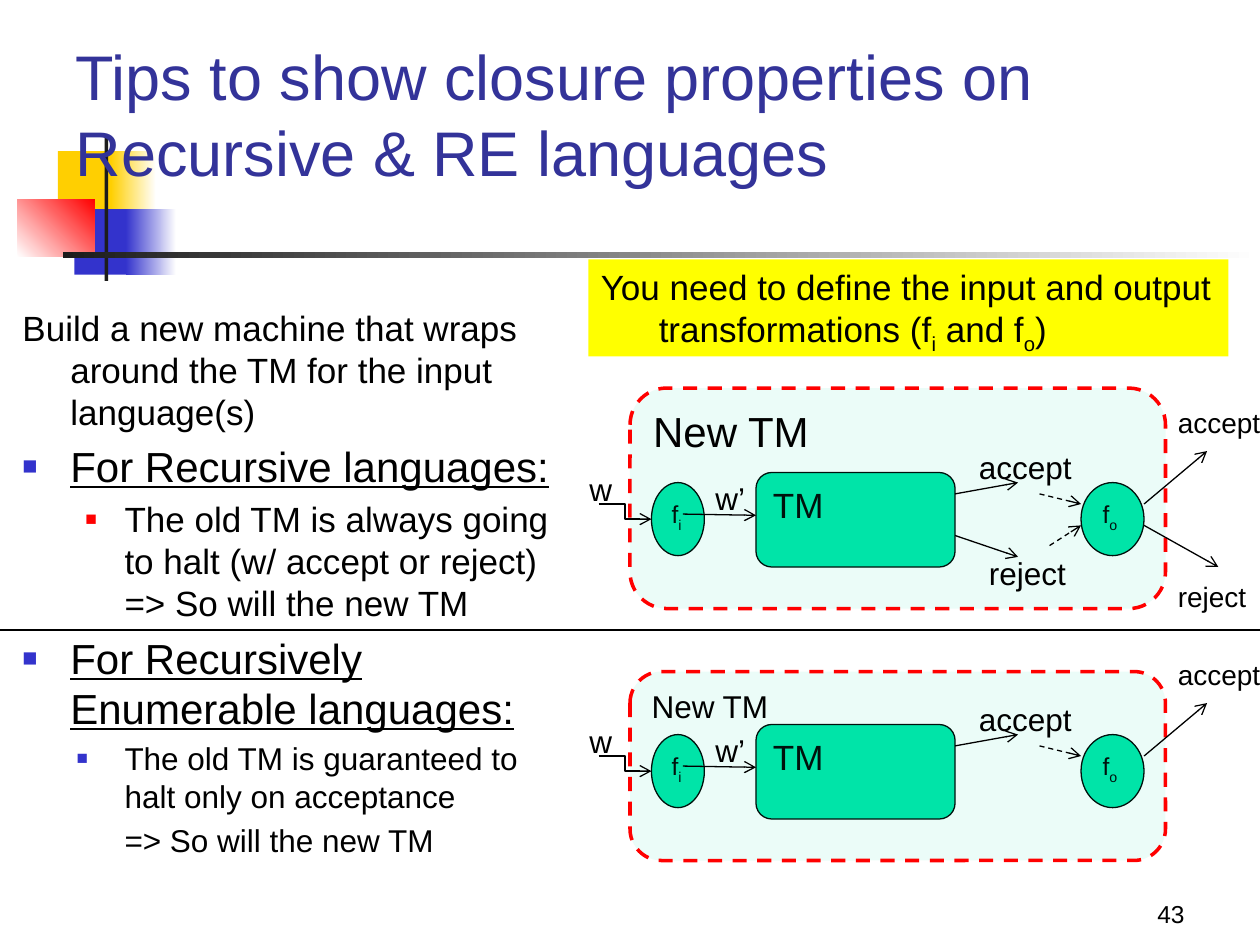
import lxml.etree
import pptx
import pptx.dml.color
import pptx.enum.dml
import pptx.enum.shapes
import pptx.enum.text
import pptx.oxml.ns
import pptx.util

Inches = pptx.util.Inches
Pt = pptx.util.Pt
RGBColor = pptx.dml.color.RGBColor
SHAPE = pptx.enum.shapes.MSO_SHAPE
CONNECTOR = pptx.enum.shapes.MSO_CONNECTOR
ANCHOR = pptx.enum.text.MSO_ANCHOR
ALIGN = pptx.enum.text.PP_ALIGN
FIT = pptx.enum.text.MSO_AUTO_SIZE
DASH = pptx.enum.dml.MSO_LINE.DASH
qn = pptx.oxml.ns.qn

BLACK = RGBColor(0x00, 0x00, 0x00)
WHITE = RGBColor(0xFF, 0xFF, 0xFF)
CHARCOAL = RGBColor(0x1C, 0x1C, 0x1C)
GOLD = RGBColor(0xFF, 0xCF, 0x01)
BLUE = RGBColor(0x33, 0x33, 0xCC)
NAVY = RGBColor(0x33, 0x33, 0x99)
RED = RGBColor(0xFF, 0x00, 0x00)
GREEN = RGBColor(0x00, 0xE4, 0xA8)
YELLOW = RGBColor(0xFF, 0xFF, 0x00)


def add_runs(paragraph, text, size, color=BLACK, underline=False):
    """Add text in Arial; every second piece between underscores is a subscript."""
    paragraph.alignment = ALIGN.LEFT
    for index, piece in enumerate(text.split("_")):
        run = paragraph.add_run()
        run.text = piece
        run.font.name = "Arial"
        run.font.size = Pt(size)
        run.font.color.rgb = color
        if underline:
            run.font.underline = True
        if index % 2:
            run.font._element.set("baseline", "-25000")


def add_line(start, end, kind=CONNECTOR.STRAIGHT, dashed=False, arrow=True):
    line = slide.shapes.add_connector(kind, *map(Inches, start + end))
    line.line.color.rgb = BLACK
    line.line.width = Pt(0.75)
    if dashed:
        line.line.dash_style = DASH
    if arrow:
        outline = line.line._get_or_add_ln()
        lxml.etree.SubElement(outline, qn("a:tailEnd"), type="arrow")
    lxml.etree.SubElement(line.element.spPr, qn("a:effectLst"))


presentation = pptx.Presentation()
presentation.slide_width = Inches(10)
presentation.slide_height = Inches(7.5)
slide = presentation.slides.add_slide(presentation.slide_layouts[5])

# Decoration: coloured squares, upright bar and rule
decorations = [
    ((0.46, 1.2, 0.48, 0.52), GOLD, None, 0),
    ((0.88, 1.2, 0.36, 0.52), GOLD, WHITE, 0),
    ((0.59, 1.66, 0.46, 0.52), BLUE, None, 0),
    ((1, 1.66, 0.4, 0.52), BLUE, WHITE, 0),
    ((0.14, 1.58, 0.61, 0.46), WHITE, RED, 45),
    ((0.83, 1.08, 0.03, 1.15), CHARCOAL, None, 0),
    ((0.5, 2, 9.5, 0.05), CHARCOAL, WHITE, 0),
]
for bounds, color, end_color, angle in decorations:
    shape = slide.shapes.add_shape(SHAPE.RECTANGLE, *map(Inches, bounds))
    shape.shadow.inherit = False
    shape.line.fill.background()
    if end_color is None:
        shape.fill.solid()
        shape.fill.fore_color.rgb = color
    else:
        shape.fill.gradient()
        shape.fill.gradient_angle = angle
        for stop, stop_color in zip(shape.fill.gradient_stops, (color, end_color)):
            stop.color.rgb = stop_color

# Title, in front of the decoration
title = slide.shapes.title
title.element.getparent().append(title.element)
title.left, title.top, title.width, title.height = map(Inches, (0.5, 0.3, 9, 1.25))
title.text_frame.vertical_anchor = ANCHOR.BOTTOM
title.text_frame.auto_size = FIT.NONE
add_runs(title.text_frame.paragraphs[0],
         "Tips to show closure properties on Recursive & RE languages", 36, NAVY)

# Body: text, size, underline, left margin, first-line indent, bullet colour, bullet size
body_lines = [
    ("Build a new machine that wraps around the TM for the input language(s)",
     20, False, 0.38, -0.38, None, None),
    ("For Recursive languages:", 24, True, 0.38, -0.38, BLUE, 60),
    ("The old TM is always going to halt (w/ accept or reject) => So will the new TM",
     20, False, 0.81, -0.31, RED, 55),
    ("For Recursively Enumerable languages:", 24, True, 0.38, -0.38, BLUE, 60),
    ("The old TM is guaranteed to halt only on acceptance",
     18, False, 0.81, -0.38, BLUE, 60),
    ("=> So will the new TM", 18, False, 0.81, 0, None, None),
]
body = slide.shapes.add_textbox(*map(Inches, (0.08, 2.38, 4.42, 4.32))).text_frame
body.word_wrap = True
for index, (text, size, underline, margin, indent, color, percent) in enumerate(body_lines):
    paragraph = body.add_paragraph() if index else body.paragraphs[0]
    add_runs(paragraph, text, size, underline=underline)
    paragraph.space_before = Pt(0.2 * size)
    properties = paragraph._p.get_or_add_pPr()
    properties.set("marL", str(Inches(margin)))
    properties.set("indent", str(Inches(indent)))
    if color is not None:
        bullet_color = lxml.etree.SubElement(properties, qn("a:buClr"))
        lxml.etree.SubElement(bullet_color, qn("a:srgbClr"), val=str(color))
        lxml.etree.SubElement(properties, qn("a:buSzPct"), val=str(percent * 1000))
        lxml.etree.SubElement(properties, qn("a:buFont"), typeface="Arial")
        lxml.etree.SubElement(properties, qn("a:buChar"), char="■")

# Slide number
number = slide.shapes.add_textbox(*map(Inches, (7.42, 6.92, 2.08, 0.5))).text_frame
number.word_wrap = True
number.vertical_anchor = ANCHOR.BOTTOM
add_runs(number.paragraphs[0], "43", 14)
number.paragraphs[0].alignment = ALIGN.RIGHT

# Yellow note
note = slide.shapes.add_textbox(*map(Inches, (4.67, 2.06, 5.08, 0.77)))
note.fill.solid()
note.fill.fore_color.rgb = YELLOW
note.text_frame.word_wrap = False
note.text_frame.auto_size = FIT.SHAPE_TO_FIT_TEXT
paragraph = note.text_frame.paragraphs[0]
add_runs(paragraph, "You need to define the input and output", 20)
paragraph.add_line_break()
add_runs(paragraph, "transformations (f_i_ and f_o_)", 20)
properties = paragraph._p.get_or_add_pPr()
properties.set("marL", str(Inches(0.46)))
properties.set("indent", str(Inches(-0.46)))

add_line((0, 5), (10, 5), arrow=False)

# Two machines: vertical offset, frame top, frame height, frame text size, rejects
for offset, frame_top, frame_height, frame_size, rejects in [
    (0, 3.08, 1.75, 24, True),
    (2, 5.33, 1.5, 18, False),
]:
    nodes = [
        (SHAPE.ROUNDED_RECTANGLE, (6, 3.75 + offset, 1.58, 0.75), "TM", 20),
        (SHAPE.OVAL, (5.17, 3.83 + offset, 0.42, 0.58), "f_i", 14),
        (SHAPE.OVAL, (8.58, 3.83 + offset, 0.5, 0.58), "f_o", 14),
        (SHAPE.ROUNDED_RECTANGLE, (5, frame_top, 4.25, frame_height), "New TM", frame_size),
    ]
    for kind, bounds, text, size in nodes:
        shape = slide.shapes.add_shape(kind, *map(Inches, bounds))
        shape.shadow.inherit = False
        shape.fill.solid()
        shape.fill.fore_color.rgb = GREEN
        shape.line.color.rgb = BLACK
        shape.line.width = Pt(0.75)
        shape.text_frame.vertical_anchor = ANCHOR.TOP
        add_runs(shape.text_frame.paragraphs[0], text, size)
        if text == "New TM":
            fill_color = shape.element.spPr.find(qn("a:solidFill")).find(qn("a:srgbClr"))
            lxml.etree.SubElement(fill_color, qn("a:alpha"), val="8000")
            shape.line.color.rgb = RED
            shape.line.width = Pt(2)
            shape.line.dash_style = DASH

    labels = [
        ("w", 4.58, 3.68, 0.38, 18),
        ("w’", 5.58, 3.75, 0.44, 18),
        ("accept", 7.67, 3.51, 0.94, 18),
        ("accept", 9.25, 3.17, 0.86, 16),
    ]
    arrows = [
        ((5.42, 4.08), (6, 4.09), False),
        ((7.58, 3.92), (8.08, 3.83), False),
        ((8.25, 3.92), (8.58, 4), True),
        ((9.08, 4), (9.58, 3.58), False),
    ]
    if rejects:
        labels += [("reject", 7.75, 4.35, 0.82, 18), ("reject", 9.25, 4.55, 0.75, 16)]
        arrows += [
            ((7.58, 4.25), (8.08, 4.42), False),
            ((8.33, 4.33), (8.58, 4.17), True),
            ((9.08, 4.17), (9.67, 4.5), False),
        ]
    for text, left, top, width, size in labels:
        height = 0.4 if size == 18 else 0.37
        label = slide.shapes.add_textbox(*map(Inches, (left, top + offset, width, height)))
        label.text_frame.word_wrap = False
        label.text_frame.auto_size = FIT.SHAPE_TO_FIT_TEXT
        add_runs(label.text_frame.paragraphs[0], text, size)
    for (x1, y1), (x2, y2), dashed in arrows:
        add_line((x1, y1 + offset), (x2, y2 + offset), dashed=dashed)
    add_line((4.75, 4 + offset), (5.17, 4.12 + offset), CONNECTOR.ELBOW)

presentation.save("out.pptx")
